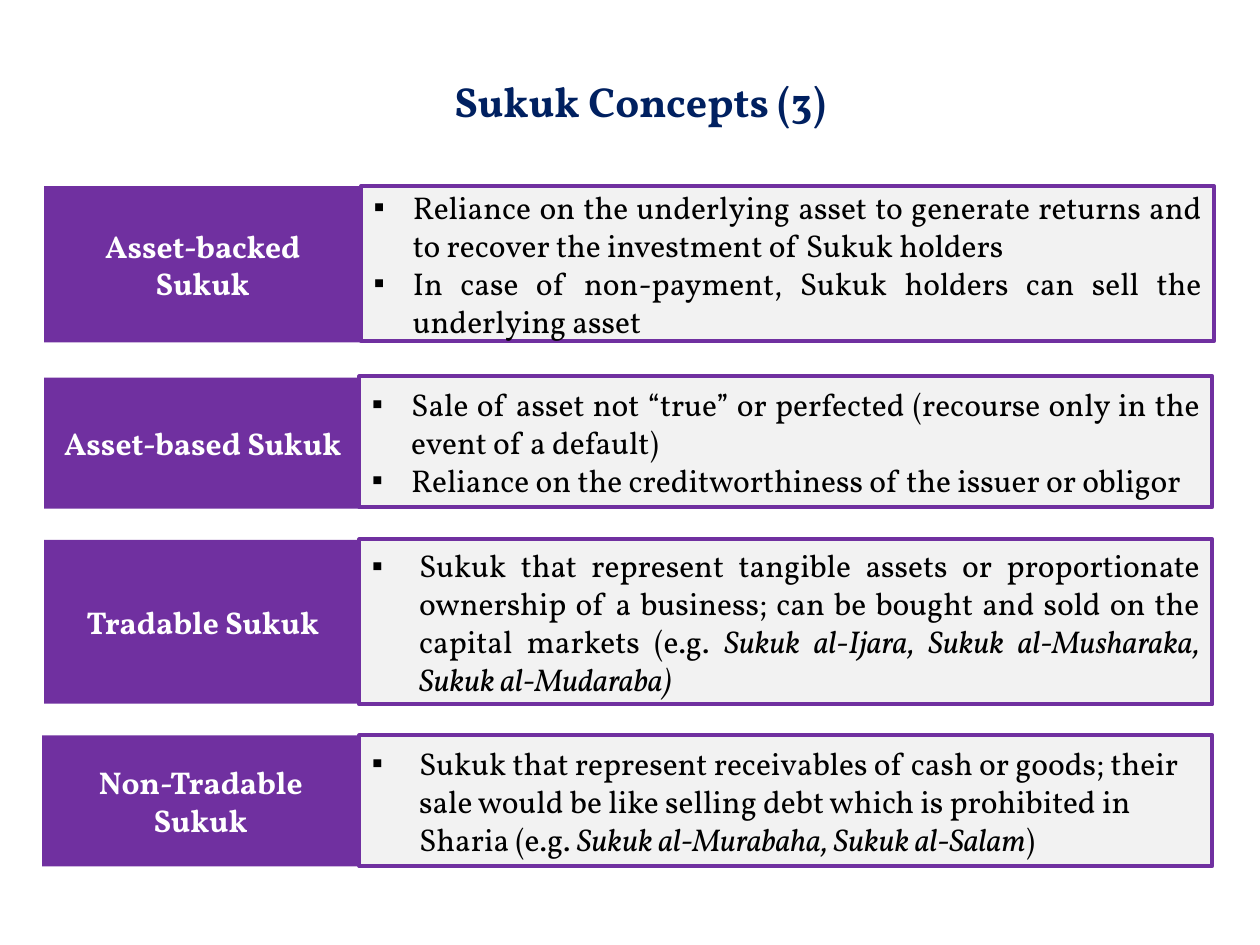
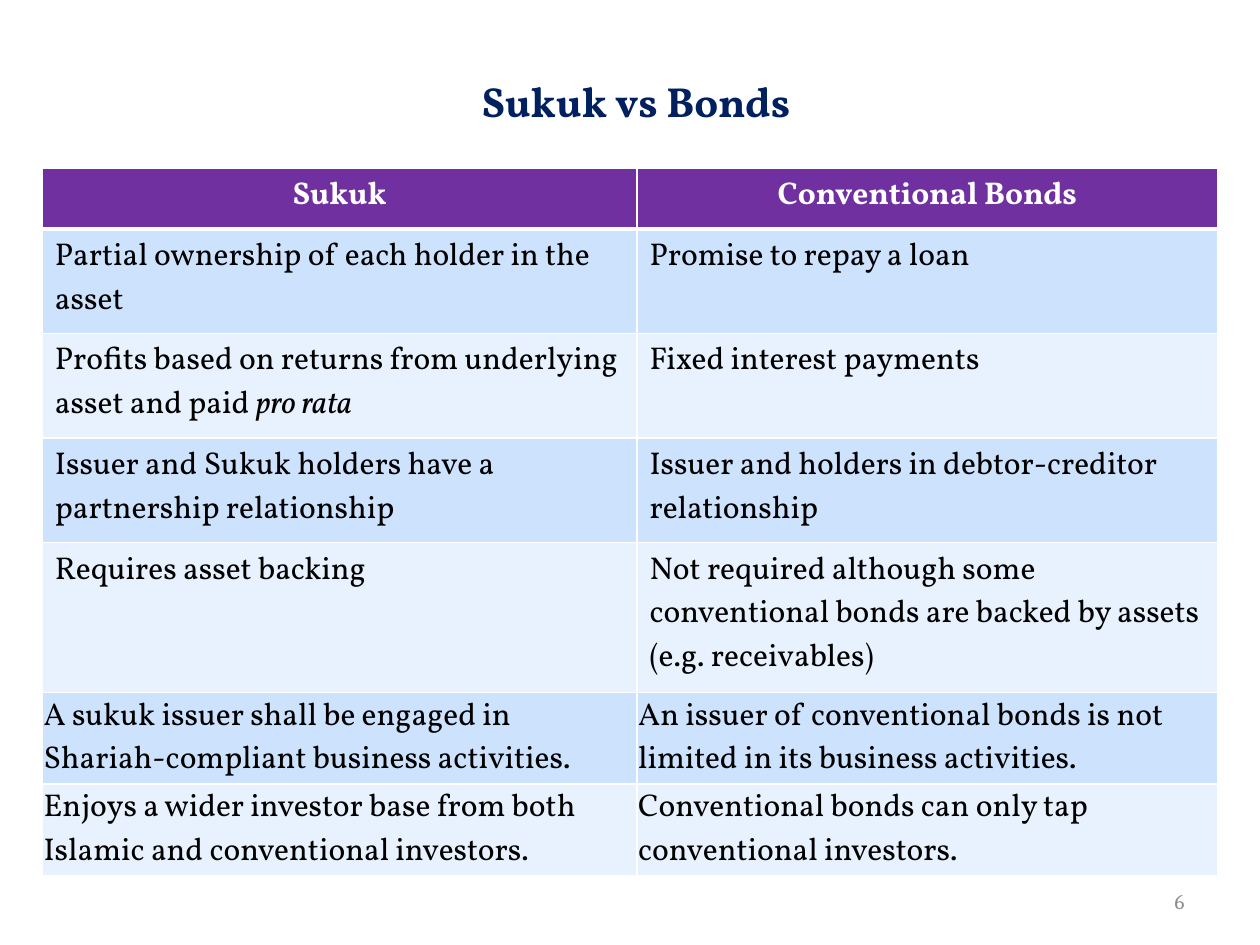
from itertools import product

from lxml import etree
from pptx import Presentation
from pptx.dml.color import RGBColor
from pptx.enum import shapes, text
from pptx.oxml.ns import qn
from pptx.util import Pt

PURPLE = RGBColor(0x70, 0x30, 0xA0)
NAVY = RGBColor(0x00, 0x20, 0x60)
WHITE = RGBColor(0xFF, 0xFF, 0xFF)
BLACK = RGBColor(0x00, 0x00, 0x00)
GRAY = RGBColor(0x8C, 0x8C, 0x8C)
PANEL = RGBColor(0xF2, 0xF2, 0xF2)
BANDS = [RGBColor(0xCD, 0xE2, 0xFD), RGBColor(0xE8, 0xF1, 0xFE)]
FONT = "Vollkorn"
TITLE_ONLY = 5
LEFT, CENTER, RIGHT, JUSTIFY = (
    text.PP_ALIGN.LEFT, text.PP_ALIGN.CENTER, text.PP_ALIGN.RIGHT, text.PP_ALIGN.JUSTIFY)
TOP, MIDDLE = text.MSO_ANCHOR.TOP, text.MSO_ANCHOR.MIDDLE

LABEL_LEFT, LABEL_WIDTH = 25.2, 181.4
PANEL_LEFT, PANEL_WIDTH = 205.4, 487.4

# label, label box (left, top, height), panel box (left, top, height),
# bullet indent, alignment, points; text between asterisks is italic
CONCEPTS = [
    ("Asset-backed Sukuk", (LABEL_LEFT, 106.4, 89.3), (206.4, 106.4, 88.6), 22.5, JUSTIFY,
     ["Reliance on the underlying asset to generate returns and to recover the "
      "investment of Sukuk holders",
      "In case of non-payment, Sukuk holders can sell the underlying asset"]),
    ("Asset-based Sukuk", (LABEL_LEFT, 215.8, 74.9), (PANEL_LEFT, 215, 74.9), 22.5, JUSTIFY,
     ["Sale of asset not “true” or perfected (recourse only in the event of a default)",
      "Reliance on the creditworthiness of the issuer or obligor"]),
    ("Tradable Sukuk", (LABEL_LEFT, 308.5, 93.6), (PANEL_LEFT, 308.2, 94.3), 27, JUSTIFY,
     ["Sukuk that represent tangible assets or proportionate ownership of a business; "
      "can be bought and sold on the capital markets (e.g. "
      "*Sukuk al-Ijara, Sukuk al-Musharaka, Sukuk al-Mudaraba)*"]),
    ("Non-Tradable Sukuk", (24, 420.3, 74.9), (PANEL_LEFT, 420.1, 74.9), 27, LEFT,
     ["Sukuk that represent receivables of cash or goods; their sale would be like "
      "selling debt which is prohibited in Sharia (e.g. "
      "*Sukuk al-Murabaha, Sukuk al-Salam*)"]),
]

COMPARISON = [
    ("Sukuk", "Conventional Bonds"),
    ("Partial ownership of each holder in the asset", "Promise to repay a loan"),
    ("Profits based on returns from underlying asset and paid *pro rata*",
     "Fixed interest payments"),
    ("Issuer and Sukuk holders have a partnership relationship",
     "Issuer and holders in debtor-creditor relationship"),
    ("Requires asset backing",
     "Not required although some conventional bonds are backed by assets (e.g. receivables)"),
    ("A sukuk issuer shall be engaged in Shariah-compliant business activities.",
     "An issuer of conventional bonds is not limited in its business activities."),
    ("Enjoys a wider investor base from both Islamic and conventional investors.",
     "Conventional bonds can only tap conventional investors."),
]
COLUMN_WIDTHS = [339.8, 331.9]
ROW_HEIGHTS = [34.6, 59.8, 59.8, 59.8, 85.7, 52.2, 52.2]
FIRST_TIGHT_ROW = 5


def write(paragraph, content, size=18, color=BLACK, bold=False, align=LEFT, font=FONT):
    """Fill a paragraph; text between asterisks becomes italic."""
    paragraph.alignment = align
    paragraph.space_before = paragraph.space_after = Pt(0)
    paragraph.line_spacing = 1.0
    for index, part in enumerate(content.split("*")):
        if part:
            run = paragraph.add_run()
            run.text = part
            run.font.name, run.font.size = font, Pt(size)
            run.font.bold, run.font.italic = bold, index % 2 == 1
            run.font.color.rgb = color


def add_bullet(paragraph, indent):
    properties = paragraph._p.get_or_add_pPr()
    properties.set("marL", str(Pt(indent)))
    properties.set("indent", str(Pt(-indent)))
    etree.SubElement(properties, qn("a:buFont"), typeface="Arial")
    etree.SubElement(properties, qn("a:buChar"), char="▪")


def add_titled_slide(deck, heading):
    slide = deck.slides.add_slide(deck.slide_layouts[TITLE_ONLY])
    title = slide.shapes.title
    title.left, title.top, title.width, title.height = Pt(23.8), Pt(39.6), Pt(684), Pt(36)
    title.text_frame.auto_size = text.MSO_AUTO_SIZE.NONE
    title.text_frame.vertical_anchor = TOP
    write(title.text_frame.paragraphs[0], heading, size=24, color=NAVY, bold=True, align=CENTER)
    return slide


def add_box(slide, left, top, width, height, fill, outline=None):
    """Add a rectangle and return its text frame."""
    box = slide.shapes.add_shape(
        shapes.MSO_SHAPE.RECTANGLE, Pt(left), Pt(top), Pt(width), Pt(height))
    box.shadow.inherit = False
    box.fill.solid()
    box.fill.fore_color.rgb = fill
    if outline is None:
        box.line.fill.background()
    else:
        box.line.color.rgb = outline
        box.line.width = Pt(2.25)
    box.text_frame.word_wrap = True
    box.text_frame.vertical_anchor = MIDDLE
    return box.text_frame


def add_concept(slide, label, label_box, panel_box, indent, align, points):
    left, top, height = label_box
    frame = add_box(slide, left, top, LABEL_WIDTH, height, PURPLE)
    write(frame.paragraphs[0], label, color=WHITE, bold=True, align=CENTER)

    left, top, height = panel_box
    frame = add_box(slide, left, top, PANEL_WIDTH, height, PANEL, outline=PURPLE)
    for index, point in enumerate(points):
        paragraph = frame.add_paragraph() if index else frame.paragraphs[0]
        write(paragraph, point, align=align)
        add_bullet(paragraph, indent)


def add_borders(cell, **widths):
    """Draw white borders; sides L, R, T, B are given in that order, before the fill."""
    properties = cell._tc.get_or_add_tcPr()
    for side, width in widths.items():
        line = etree.SubElement(properties, qn(f"a:ln{side}"), w=str(Pt(width)))
        fill = etree.SubElement(line, qn("a:solidFill"))
        etree.SubElement(fill, qn("a:srgbClr"), val=str(WHITE))


def add_comparison(slide):
    table = slide.shapes.add_table(
        len(ROW_HEIGHTS), len(COLUMN_WIDTHS), Pt(24.2), Pt(96.2),
        Pt(sum(COLUMN_WIDTHS)), Pt(sum(ROW_HEIGHTS))).table
    for column, width in zip(table.columns, COLUMN_WIDTHS):
        column.width = Pt(width)
    for row, height in zip(table.rows, ROW_HEIGHTS):
        row.height = Pt(height)
    for row, column in product(range(len(ROW_HEIGHTS)), range(len(COLUMN_WIDTHS))):
        cell = table.cell(row, column)
        header = row == 0
        add_borders(cell, L=1, R=1, T=3 if row == 1 else 1, B=3 if header else 1)
        cell.fill.solid()
        cell.fill.fore_color.rgb = PURPLE if header else BANDS[(row - 1) % 2]
        if row >= FIRST_TIGHT_ROW:
            cell.vertical_anchor = MIDDLE
            cell.margin_left = cell.margin_top = cell.margin_right = Pt(0.7)
            cell.margin_bottom = Pt(0)
        write(cell.text_frame.paragraphs[0], COMPARISON[row][column],
              color=WHITE if header else BLACK, bold=header,
              align=CENTER if header else LEFT)


def add_page_number(slide, number):
    frame = slide.shapes.add_textbox(Pt(516.2), Pt(500.4), Pt(167.8), Pt(28.8)).text_frame
    frame.word_wrap = True
    frame.vertical_anchor = MIDDLE
    write(frame.paragraphs[0], number, size=12, color=GRAY, align=RIGHT, font="Cambria")


def main():
    deck = Presentation()
    deck.slide_width, deck.slide_height = Pt(720), Pt(540)

    concepts = add_titled_slide(deck, "Sukuk Concepts (3)")
    for concept in CONCEPTS:
        add_concept(concepts, *concept)

    versus = add_titled_slide(deck, "Sukuk vs Bonds ")
    add_comparison(versus)
    add_page_number(versus, "6")

    deck.save("out.pptx")


if __name__ == "__main__":
    main()
